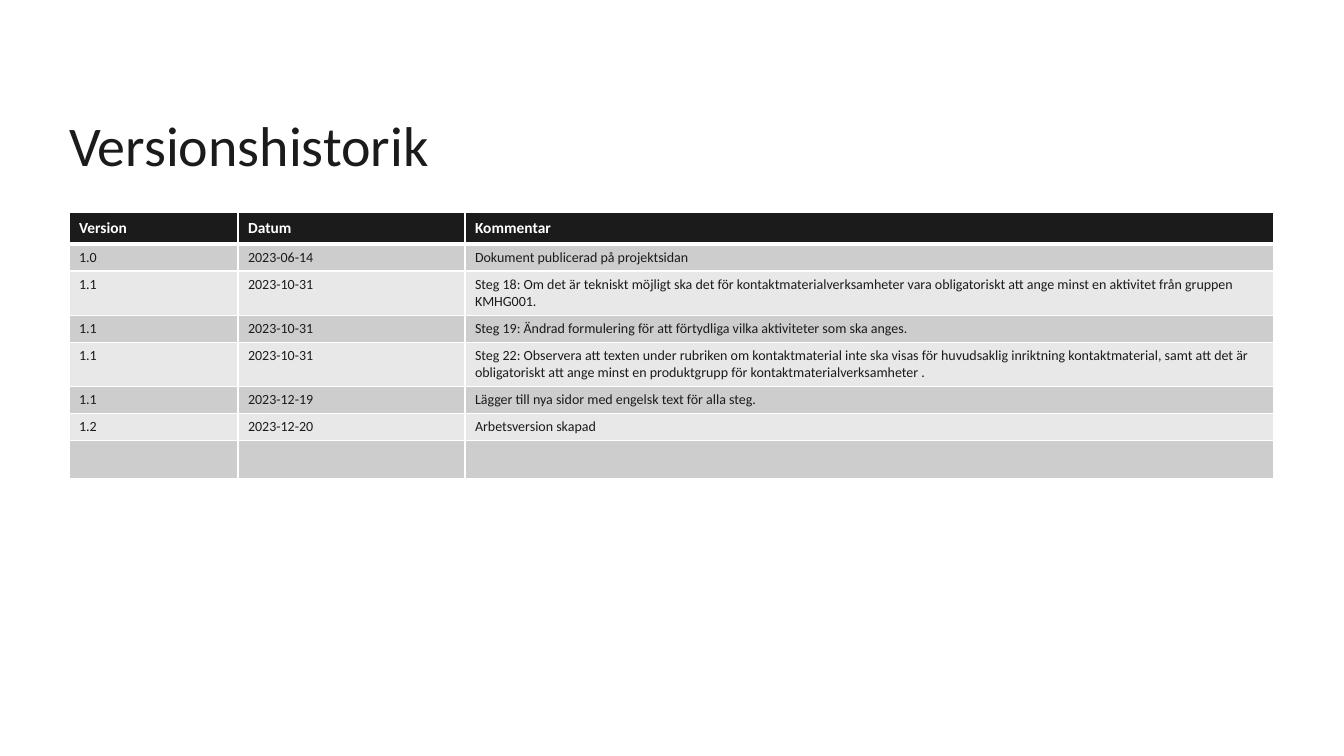
import pptx
import pptx.util
import pptx.dml.color
import pptx.enum.text
import pptx.oxml.ns
import lxml.etree

TITLE = "Versionshistorik"
ROWS = [
    ("Version", "Datum", "Kommentar"),
    ("1.0", "2023-06-14", "Dokument publicerad på projektsidan"),
    ("1.1", "2023-10-31",
     "Steg 18: Om det är tekniskt möjligt ska det för kontaktmaterialverksamheter "
     "vara obligatoriskt att ange minst en aktivitet från gruppen KMHG001."),
    ("1.1", "2023-10-31",
     "Steg 19: Ändrad formulering för att förtydliga vilka aktiviteter som ska anges."),
    ("1.1", "2023-10-31",
     "Steg 22: Observera att texten under rubriken om kontaktmaterial inte ska visas "
     "för huvudsaklig inriktning kontaktmaterial, samt att det är obligatoriskt att "
     "ange minst en produktgrupp för kontaktmaterialverksamheter ."),
    ("1.1", "2023-12-19", "Lägger till nya sidor med engelsk text för alla steg."),
    ("1.2", "2023-12-20", "Arbetsversion skapad"),
    ("", "", ""),
]
WIDTHS = [169, 227, 809]
HEIGHTS = [32, 27, 44, 27, 44, 27, 27, 38]
LEFT, TOP = 69, 212
INK, WHITE = "1B1B1B", "FFFFFF"
BANDS = ["E8E8E8", "CDCDCD"]
ANCHOR = pptx.enum.text.MSO_ANCHOR


def px(n):
    return pptx.util.Emu(round(n * 914400 / 100.8))


def color(code):
    return pptx.dml.color.RGBColor.from_string(code)


def write(frame, text, size, ink=INK, bold=False, space=None):
    para = frame.paragraphs[0]
    para.line_spacing = space
    if not text:
        end = lxml.etree.SubElement(para._p, pptx.oxml.ns.qn("a:endParaRPr"))
        end.set("sz", str(size * 100))
        return
    run = para.add_run()
    run.text = text
    font = run.font
    font.name, font.size, font.bold = "Calibri", pptx.util.Pt(size), bold
    font.color.rgb = color(ink)


def edge(cell, side, points):
    """Draw a white border on one side (L, R, T or B) of a cell."""
    qn = pptx.oxml.ns.qn
    props = cell._tc.get_or_add_tcPr()
    line = lxml.etree.SubElement(props, qn("a:ln" + side), w=str(points * 12700))
    fill = lxml.etree.SubElement(line, qn("a:solidFill"))
    lxml.etree.SubElement(fill, qn("a:srgbClr"), val=WHITE)


def main():
    deck = pptx.Presentation()
    deck.slide_width, deck.slide_height = px(1344), px(756)
    slide = deck.slides.add_slide(deck.slide_layouts[5])

    title = slide.shapes.title
    title.left, title.top, title.width, title.height = map(px, (LEFT, 40, 1206, 139))
    frame = title.text_frame
    frame.margin_left = frame.margin_top = frame.margin_right = frame.margin_bottom = 0
    frame.vertical_anchor = ANCHOR.BOTTOM
    frame.word_wrap = True
    frame.paragraphs[0].alignment = pptx.enum.text.PP_ALIGN.LEFT
    write(frame, TITLE, 40, space=0.9)

    table = slide.shapes.add_table(
        len(ROWS), len(WIDTHS), px(LEFT), px(TOP),
        px(sum(WIDTHS)), px(sum(HEIGHTS))).table
    for col, width in zip(table.columns, WIDTHS):
        col.width = px(width)
    for r, row in enumerate(ROWS):
        table.rows[r].height = px(HEIGHTS[r])
        head = r == 0
        for c, text in enumerate(row):
            cell = table.cell(r, c)
            for side in "LRTB":
                thick = (r, side) in [(0, "B"), (1, "T")]
                edge(cell, side, 3 if thick else 1)
            cell.fill.solid()
            cell.fill.fore_color.rgb = color(INK if head else BANDS[r % 2])
            cell.vertical_anchor = ANCHOR.MIDDLE if r < 2 else ANCHOR.TOP
            write(cell.text_frame, text, 11 if head else 10,
                  ink=WHITE if head else INK, bold=head)

    deck.save("out.pptx")


if __name__ == "__main__":
    main()
